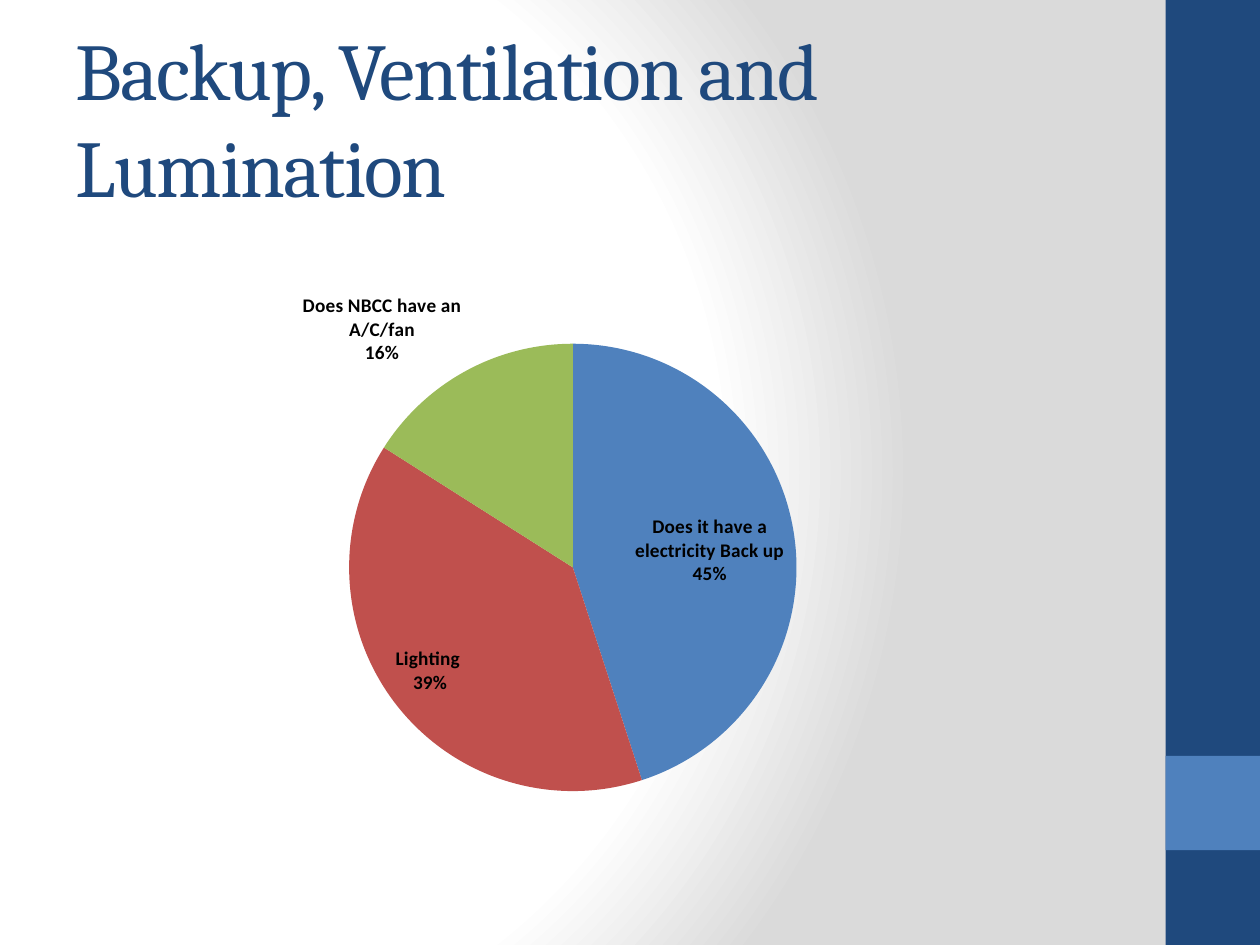
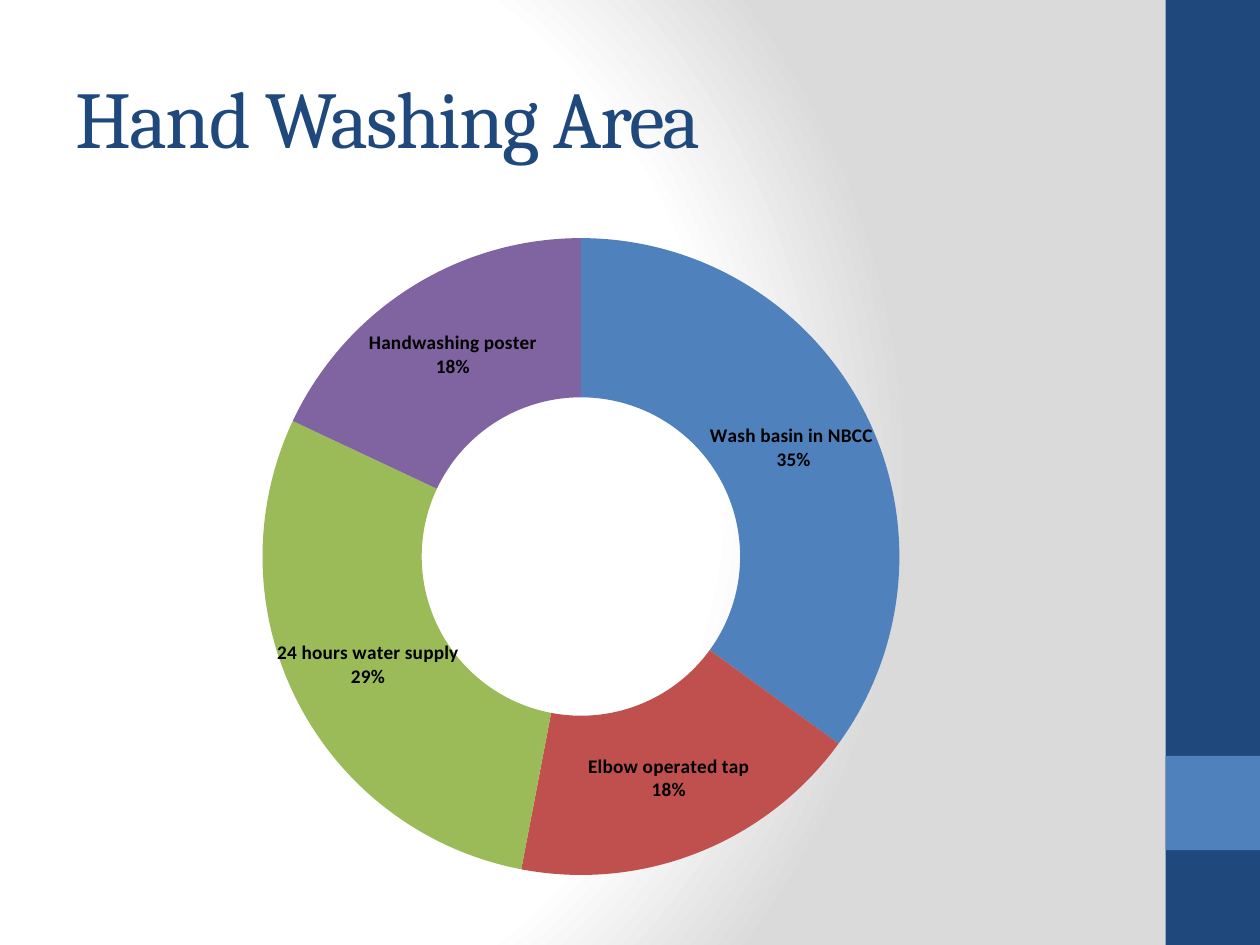
import pptx
import pptx.chart.data
import pptx.dml.color
import pptx.enum.chart
import pptx.enum.shapes
import pptx.enum.text
import pptx.oxml
import pptx.oxml.ns
import pptx.util

Cm = pptx.util.Cm
Pt = pptx.util.Pt
RGB = pptx.dml.color.RGBColor
Kind = pptx.enum.chart.XL_CHART_TYPE

NAVY = RGB(0x1F, 0x49, 0x7D)
BLUE = RGB(0x4F, 0x81, 0xBD)
RED = RGB(0xC0, 0x50, 0x4D)
GREEN = RGB(0x9B, 0xBB, 0x59)
PURPLE = RGB(0x80, 0x64, 0xA2)
BLACK = RGB(0, 0, 0)
WHITE = RGB(0xFF, 0xFF, 0xFF)
GREY = RGB(0xDA, 0xDA, 0xDA)
SLICES = (BLUE, RED, GREEN, PURPLE)
HEAD = "Cambria"
BODY = "Calibri"


def parse(tag, inner):
    """Build an element from its prefixed tag and inner XML."""
    spaces = pptx.oxml.ns.nsdecls("a", "c")
    return pptx.oxml.parse_xml(f"<{tag} {spaces}>{inner}</{tag}>")


class Deck:
    def __init__(self):
        self.show = pptx.Presentation()
        self.show.slide_width = Cm(25.4)
        self.show.slide_height = Cm(19.05)
        self.slide = None
        self.glow()

    def glow(self):
        """Give the master a white to grey radial background."""
        master = self.show.slide_master
        master.background.fill.gradient()
        old = master.element.xpath("p:cSld/p:bg/p:bgPr/a:gradFill")[0]
        stops = "".join(
            f'<a:gs pos="{pos * 1000}"><a:srgbClr val="{tint}"/></a:gs>'
            for pos, tint in ((0, WHITE), (75, WHITE), (100, GREY)))
        new = parse("a:gradFill", f'<a:gsLst>{stops}</a:gsLst><a:path path="circle">'
                    '<a:fillToRect l="20000" t="50000" r="100000" b="50000"/></a:path>')
        old.getparent().replace(old, new)

    def page(self, text):
        self.slide = self.show.slides.add_slide(self.show.slide_layouts[5])
        self.band(0, 19.05, NAVY)
        self.band(15.24, 1.9, BLUE)
        self.title(text)

    def band(self, top, height, color):
        shape = self.slide.shapes.add_shape(
            pptx.enum.shapes.MSO_SHAPE.RECTANGLE,
            Cm(23.5), Cm(top), Cm(1.9), Cm(height))
        shape.shadow.inherit = False
        shape.fill.solid()
        shape.fill.fore_color.rgb = color
        shape.line.fill.background()

    def title(self, text):
        shape = self.slide.shapes.title
        shape.left, shape.top = Cm(1.27), Cm(0.76)
        shape.width, shape.height = Cm(21.16), Cm(3.18)
        frame = shape.text_frame
        frame.text = text
        frame.word_wrap = True
        frame.auto_size = pptx.enum.text.MSO_AUTO_SIZE.NONE
        frame.vertical_anchor = pptx.enum.text.MSO_ANCHOR.MIDDLE
        line = frame.paragraphs[0]
        line.alignment = pptx.enum.text.PP_ALIGN.LEFT
        font = line.runs[0].font
        font.name, font.size = HEAD, Pt(46)
        font.color.rgb = NAVY
        for props in shape.element.xpath(".//a:rPr"):
            props.set("spc", "-100")

    def chart(self, kind, box, shares):
        """Add a round chart whose slices carry name and percent."""
        data = pptx.chart.data.CategoryChartData()
        data.categories = list(shares)
        data.add_series("Series 1", list(shares.values()))
        chart = self.slide.shapes.add_chart(kind, *map(Cm, box), data).chart
        chart.has_title = chart.has_legend = False
        chart.font.name, chart.font.size = BODY, Pt(10)
        chart.font.color.rgb = BLACK
        plot = chart.plots[0]
        plot.vary_by_categories = True
        for spot, color in zip(range(len(shares)), SLICES):
            fill = plot.series[0].points[spot].format.fill
            fill.solid()
            fill.fore_color.rgb = color
        self.label(chart, plot)
        return chart

    def label(self, chart, plot):
        plot.has_data_labels = True
        labels = plot.data_labels
        labels.show_value = False
        labels.show_category_name = labels.show_percentage = True
        labels.number_format = "0%"
        labels.number_format_is_linked = False
        font = labels.font
        font.name, font.size, font.bold = BODY, Pt(11), True
        font.color.rgb = BLACK
        for node in chart.element.xpath(".//c:showBubbleSize"):
            node.addnext(parse("c:separator", "\n"))

    def fit(self, chart, **frame):
        """Place the plot by fractions x, y, w and h of the chart."""
        area = chart.element.xpath(".//c:plotArea")[0]
        for old in area.xpath("c:layout"):
            area.remove(old)
        sizes = "".join(f'<c:{key} val="{part}"/>' for key, part in frame.items())
        area.insert(0, parse("c:layout", '<c:manualLayout><c:layoutTarget val="inner"/>'
                             '<c:xMode val="edge"/><c:yMode val="edge"/>'
                             f'{sizes}</c:manualLayout>'))


def main():
    deck = Deck()

    deck.page("Backup, Ventilation and Lumination")
    pie = deck.chart(Kind.PIE, (1.9, 5.28, 19.69, 11), {
        "Does it have a electricity Back up": 45,
        "Lighting ": 39,
        "Does NBCC have an A/C/fan": 16,
    })
    pie.plots[0].data_labels.position = pptx.enum.chart.XL_LABEL_POSITION.BEST_FIT
    deck.fit(pie, x=0.26, y=0.15, w=0.46, h=0.82)

    deck.page("Hand Washing Area")
    deck.chart(Kind.DOUGHNUT, (1.27, 4.45, 20.96, 13.54), {
        "Wash basin in NBCC ": 35,
        "Elbow operated tap": 18,
        "24 hours water supply": 29,
        "Handwashing poster": 18,
    })

    deck.show.save("out.pptx")


if __name__ == "__main__":
    main()
